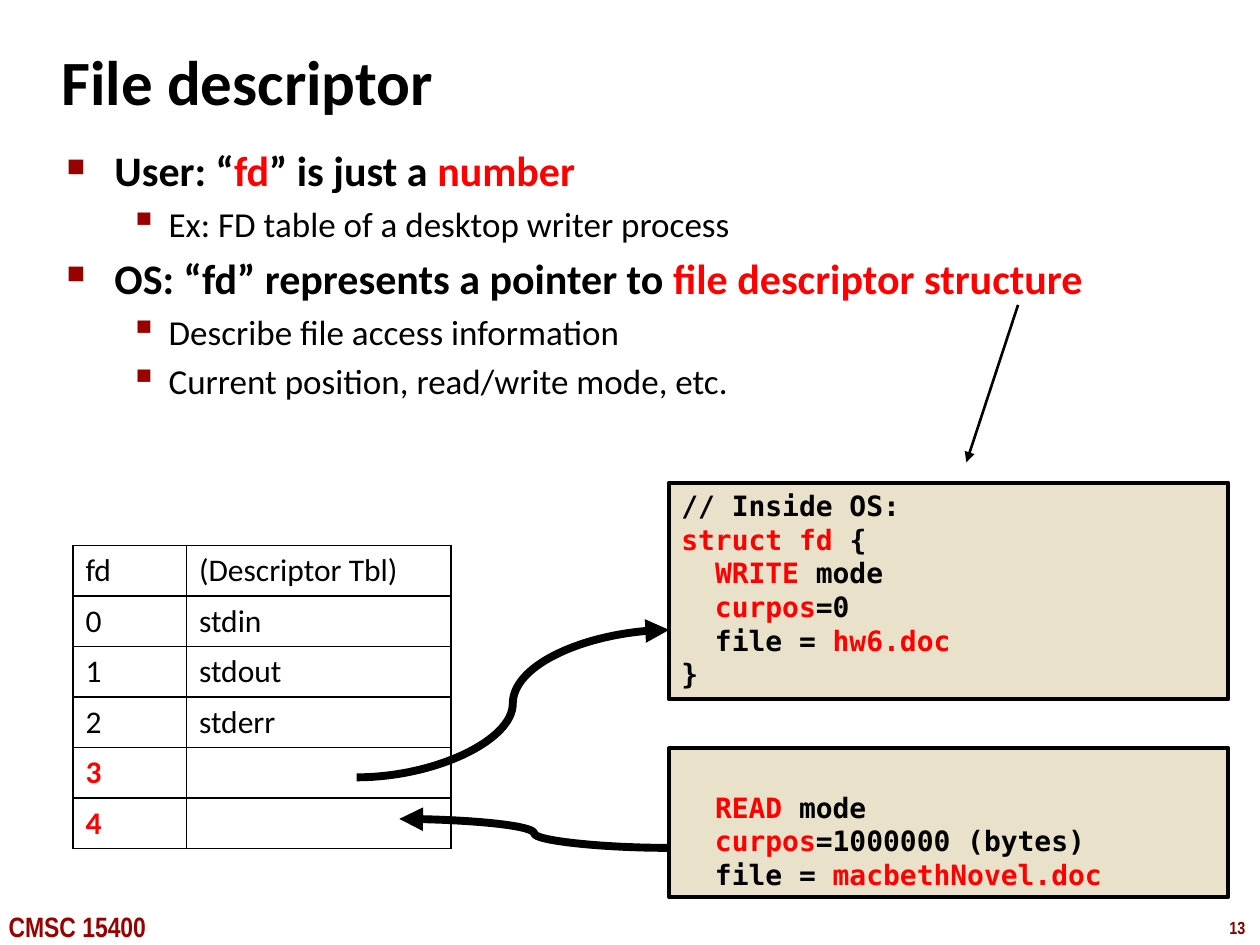
from dataclasses import dataclass
from typing import NamedTuple

from lxml import etree
from pptx import Presentation
from pptx.dml.color import RGBColor
from pptx.enum.shapes import MSO_CONNECTOR, MSO_SHAPE
from pptx.enum.text import MSO_ANCHOR, PP_ALIGN
from pptx.oxml.ns import qn
from pptx.util import Inches, Pt

STRAIGHT, CURVE = MSO_CONNECTOR.STRAIGHT, MSO_CONNECTOR.CURVE
RECT = MSO_SHAPE.RECTANGLE
TOP, MIDDLE, BOTTOM = MSO_ANCHOR.TOP, MSO_ANCHOR.MIDDLE, MSO_ANCHOR.BOTTOM
LEFT = PP_ALIGN.LEFT


@dataclass(frozen=True)
class Theme:
    black: str = "000000"
    red: str = "FF0000"
    maroon: str = "990000"
    dark: str = "800000"
    sand: str = "E9E1C9"
    sans: str = "Calibri"
    mono: str = "DejaVu Sans Mono"
    narrow: str = "Arial Narrow"
    title: int = 36
    head: int = 24
    sub: int = 20
    cell: int = 18
    code: int = 16
    page: int = 10


T = Theme()


class Part(NamedTuple):
    text: str
    color: str = T.black


class Level(NamedTuple):
    size: int
    bold: bool
    margin: float
    hang: float
    mark: str
    scale: int


class Point(NamedTuple):
    level: Level
    parts: list[Part]


class Box(NamedTuple):
    left: float
    top: float
    width: float
    height: float


class Code(NamedTuple):
    box: Box
    anchor: MSO_ANCHOR
    lines: list[list[Part]]


class Arrow(NamedTuple):
    kind: MSO_CONNECTOR
    start: tuple[float, float]
    end: tuple[float, float]
    width: float


def red(text: str) -> Part:
    return Part(text, T.red)


HEAD = Level(T.head, True, 0.38, 0.38, "■", 60)
SUB = Level(T.sub, False, 0.81, 0.31, "▪", 110)

POINTS = [
    Point(HEAD, [Part("User: “"), red("fd"), Part("” is just a "), red("number")]),
    Point(SUB, [Part("Ex: FD table of a desktop writer process")]),
    Point(HEAD, [Part("OS: “fd” represents a pointer to "),
                 red("file descriptor structure")]),
    Point(SUB, [Part("Describe file access information")]),
    Point(SUB, [Part("Current position, read/write mode, etc.")]),
]

CODES = [
    Code(Box(5.31, 3.83, 4.44, 1.72), TOP, [
        [Part("// Inside OS:")],
        [red("struct fd "), Part("{")],
        [Part("  "), red("WRITE"), Part(" mode")],
        [red("  curpos"), Part("=0")],
        [Part("  file = "), red("hw6.doc")],
        [Part("}")],
    ]),
    Code(Box(5.31, 5.94, 4.44, 1.18), BOTTOM, [
        [Part("  "), red("READ"), Part(" mode")],
        [red("  curpos"), Part("=1000000 (bytes)")],
        [Part("  file = "), red("macbethNovel.doc")],
    ]),
]

ROWS = [("fd", "(Descriptor Tbl)"), ("0", "stdin"), ("1", "stdout"),
        ("2", "stderr"), ("3", ""), ("4", "")]
OPEN_FDS = {"3", "4"}

ARROWS = [
    Arrow(CURVE, (2.83, 6.17), (5.31, 5), 4.5),
    Arrow(CURVE, (5.31, 6.73), (3.17, 6.5), 4.5),
    Arrow(STRAIGHT, (8.08, 2.42), (7.67, 3.67), 1.5),
]


def rgb(color: str) -> RGBColor:
    return RGBColor.from_string(color)


def write(para, parts: list[Part], font: str, size: int, bold: bool = True) -> None:
    for part in parts:
        run = para.add_run()
        run.text = part.text
        run.font.name, run.font.size, run.font.bold = font, Pt(size), bold
        run.font.color.rgb = rgb(part.color)


def add_text(slide, box: Box, wrap: bool = True, anchor=TOP):
    frame = slide.shapes.add_textbox(*map(Inches, box)).text_frame
    frame.word_wrap, frame.vertical_anchor = wrap, anchor
    return frame


def add_mark(para, level: Level) -> None:
    props = para._p.get_or_add_pPr()
    props.set("marL", str(Inches(level.margin)))
    props.set("indent", str(-Inches(level.hang)))
    color = etree.SubElement(props, qn("a:buClr"))
    etree.SubElement(color, qn("a:srgbClr"), val=T.maroon)
    etree.SubElement(props, qn("a:buSzPct"), val=str(level.scale * 1000))
    etree.SubElement(props, qn("a:buChar"), char=level.mark)


def add_points(slide, box: Box, points: list[Point]) -> None:
    frame = add_text(slide, box)
    frame.margin_top = Inches(0.07)
    for i, (level, parts) in enumerate(points):
        para = frame.add_paragraph() if i else frame.paragraphs[0]
        add_mark(para, level)
        if i:
            para.space_before = Pt(level.size * 0.2)
        write(para, parts, T.sans, level.size, level.bold)


def add_code(slide, code: Code) -> None:
    shape = slide.shapes.add_shape(RECT, *map(Inches, code.box))
    shape.shadow.inherit = False
    shape.fill.solid()
    shape.fill.fore_color.rgb = rgb(T.sand)
    shape.line.color.rgb, shape.line.width = rgb(T.black), Pt(2.25)
    frame = shape.text_frame
    frame.word_wrap, frame.vertical_anchor = True, code.anchor
    for i, parts in enumerate(code.lines):
        para = frame.add_paragraph() if i else frame.paragraphs[0]
        para.alignment = LEFT
        write(para, parts, T.mono, T.code)


def add_frame(cell) -> None:
    props = cell._tc.get_or_add_tcPr()
    for i, side in enumerate(("lnL", "lnR", "lnT", "lnB")):
        line = etree.Element(qn(f"a:{side}"), w=str(Pt(1)))
        fill = etree.SubElement(line, qn("a:solidFill"))
        etree.SubElement(fill, qn("a:srgbClr"), val=T.black)
        props.insert(i, line)


def add_grid(slide, box: Box, widths: tuple[float, ...]) -> None:
    grid = slide.shapes.add_table(len(ROWS), len(widths), *map(Inches, box)).table
    grid.first_row = grid.horz_banding = False
    for col, width in zip(grid.columns, widths):
        col.width = Inches(width)
    for r, texts in enumerate(ROWS):
        for c, text in enumerate(texts):
            cell = grid.cell(r, c)
            cell.fill.background()
            add_frame(cell)
            hot = text in OPEN_FDS
            if text:
                part = red(text) if hot else Part(text)
                write(cell.text_frame.paragraphs[0], [part], T.sans, T.cell, hot)


def add_arrow(slide, arrow: Arrow) -> None:
    ends = map(Inches, arrow.start + arrow.end)
    link = slide.shapes.add_connector(arrow.kind, *ends)
    link.line.color.rgb, link.line.width = rgb(T.black), Pt(arrow.width)
    etree.SubElement(link.line._get_or_add_ln(), qn("a:tailEnd"), type="triangle")
    etree.SubElement(link._element.spPr, qn("a:effectLst"))


def main() -> None:
    deck = Presentation()
    deck.slide_width, deck.slide_height = Inches(10), Inches(7.5)
    slide = deck.slides.add_slide(deck.slide_layouts[6])

    # Footer
    page = add_text(slide, Box(9.66, 7.23, 0.34, 0.27), False)
    write(page.paragraphs[0], [Part("13", T.dark)], T.narrow, T.page)
    course = add_text(slide, Box(-0.03, 7.17, 1.42, 0.37), False)
    write(course.paragraphs[0], [Part("CMSC 15400", T.maroon)], T.narrow, T.code)

    # Title and points
    title = add_text(slide, Box(0.39, 0.33, 8.3, 0.61), anchor=MIDDLE)
    write(title.paragraphs[0], [Part("File descriptor")], T.sans, T.title)
    add_points(slide, Box(0.43, 1.08, 9.48, 2.92), POINTS)

    # Table, code boxes and the arrows between them
    add_grid(slide, Box(0.58, 4.33, 3, 2.4), (0.9, 2.1))
    for code in CODES:
        add_code(slide, code)
    for arrow in ARROWS:
        add_arrow(slide, arrow)

    deck.save("out.pptx")


if __name__ == "__main__":
    main()
